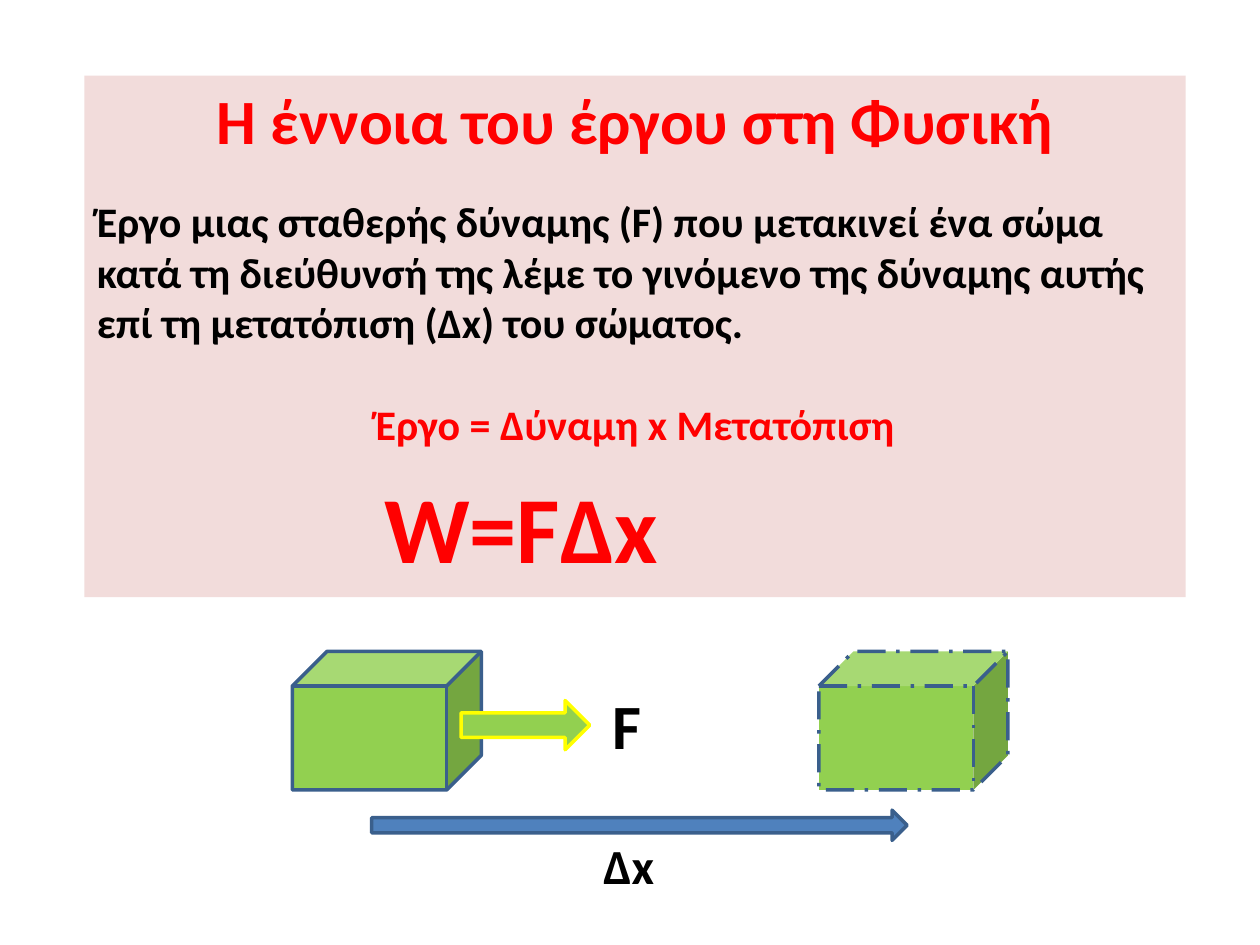
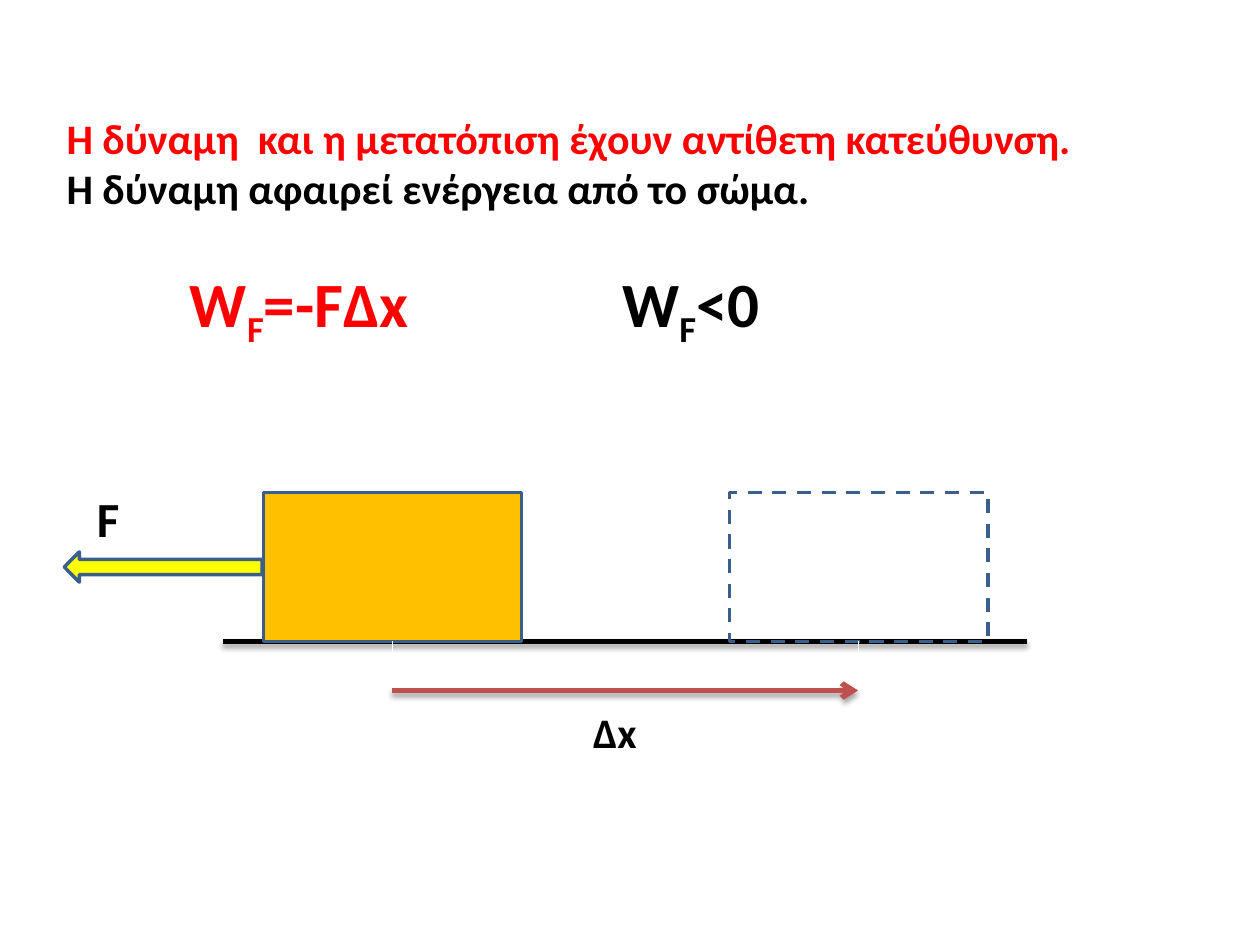
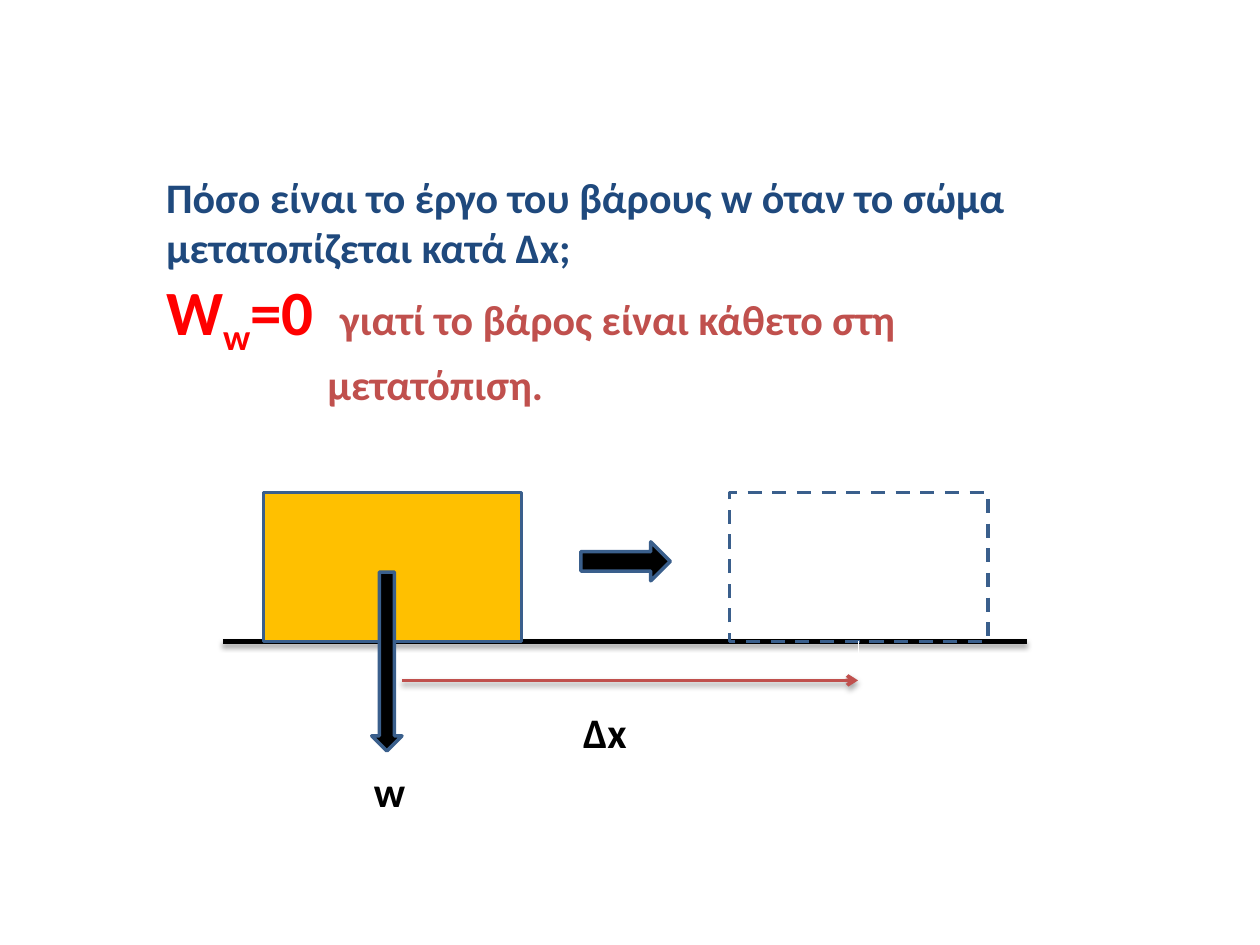
from dataclasses import dataclass

from lxml import etree
from pptx import Presentation
from pptx.dml.color import RGBColor
from pptx.enum.dml import MSO_LINE
from pptx.enum.shapes import MSO_CONNECTOR, MSO_SHAPE
from pptx.enum.text import MSO_ANCHOR, PP_ALIGN
from pptx.oxml.ns import qn
from pptx.util import Inches, Pt

FONT = "Calibri"
BLACK = RGBColor(0x00, 0x00, 0x00)
WHITE = RGBColor(0xFF, 0xFF, 0xFF)
RED = RGBColor(0xFF, 0x00, 0x00)
BRICK = RGBColor(0xC0, 0x50, 0x4D)
NAVY = RGBColor(0x1F, 0x49, 0x7D)
BLUE = RGBColor(0x4F, 0x81, 0xBD)
OUTLINE = RGBColor(0x3A, 0x5F, 0x8C)
GREEN = RGBColor(0x92, 0xD0, 0x50)
YELLOW = RGBColor(0xFF, 0xFF, 0x00)
ORANGE = RGBColor(0xFF, 0xC0, 0x00)
PINK = RGBColor(0xF2, 0xDC, 0xDB)

RECTANGLE, CUBE, ARROW = MSO_SHAPE.RECTANGLE, MSO_SHAPE.CUBE, MSO_SHAPE.RIGHT_ARROW
STRAIGHT = MSO_CONNECTOR.STRAIGHT
DASH, LONG_DASH_DOT = MSO_LINE.DASH, MSO_LINE.LONG_DASH_DOT
CENTER, LEFT = PP_ALIGN.CENTER, PP_ALIGN.LEFT
TOP = MSO_ANCHOR.TOP
BOTTOM_SIDE = 2

# The slide is a grid of 100 columns by 75 rows.
COLUMNS, ROWS = 100, 75
SLIDE_WIDTH, SLIDE_HEIGHT = Inches(10), Inches(7.5)
CELL = SLIDE_WIDTH // COLUMNS


def cells(count):
    return round(count * CELL)


@dataclass
class Box:
    """A region of the slide, in grid cells."""
    left: float
    top: float
    width: float
    height: float

    def inner(self, left, top, width, height):
        return Box(self.left + left, self.top + top, width, height)

    def place(self):
        return [cells(n) for n in (self.left, self.top, self.width, self.height)]


def draw_shape(slide, kind, box, fill=None, line=OUTLINE, dash=None, rotation=0):
    shape = slide.shapes.add_shape(kind, *box.place())
    shape.shadow.inherit = False
    shape.rotation = rotation
    for paint, color in ((shape.fill, fill), (shape.line.fill, line)):
        if color is None:
            paint.background()
        else:
            paint.solid()
            paint.fore_color.rgb = color
    if line is not None:
        shape.line.width = Pt(2)
        shape.line.dash_style = dash
    return shape


def draw_line(slide, box, color, width, shadow=False, arrow=False):
    left, top, across, down = box.place()
    line = slide.shapes.add_connector(STRAIGHT, left, top, left + across, top + down)
    line.line.color.rgb = color
    line.line.width = Pt(width)
    properties = line._element.spPr
    if arrow:
        etree.SubElement(properties.find(qn("a:ln")), qn("a:tailEnd"), type="arrow")
    effects = etree.SubElement(properties, qn("a:effectLst"))
    if shadow:
        outer = etree.SubElement(effects, qn("a:outerShdw"), blurRad=str(int(Pt(3.1))),
                                 dist=str(int(Pt(1.8))), dir="5400000", rotWithShape="0")
        tint = etree.SubElement(outer, qn("a:srgbClr"), val=str(BLACK))
        etree.SubElement(tint, qn("a:alpha"), val="35000")
    return line


def add_run(paragraph, text, size, color, subscript=False):
    run = paragraph.add_run()
    run.text = text
    look = {"name": FONT, "size": Pt(size), "bold": True}
    for name, value in look.items():
        setattr(run.font, name, value)
    run.font.color.rgb = color
    if subscript:
        run.font._element.set("baseline", "-25000")


def write(frame, paragraphs):
    """Fill a frame from (runs, layout) pairs; indent and tabs are in cells."""
    frame.word_wrap = True
    frame.vertical_anchor = TOP
    for number, (runs, layout) in enumerate(paragraphs):
        paragraph = frame.add_paragraph() if number else frame.paragraphs[0]
        properties = paragraph._p.get_or_add_pPr()
        properties.set("marL", str(cells(layout.get("indent", 0))))
        if "tabs" in layout:
            stops = etree.SubElement(properties, qn("a:tabLst"))
            for stop in layout["tabs"]:
                etree.SubElement(stops, qn("a:tab"), pos=str(cells(stop)), algn="l")
        paragraph.alignment = layout.get("align", LEFT)
        if "before" in layout:
            paragraph.space_before = Pt(layout["before"])
        for run in runs:
            add_run(paragraph, *run)


def add_text(slide, box, paragraphs):
    write(slide.shapes.add_textbox(*box.place()).text_frame, paragraphs)


def add_label(slide, box, text, size):
    add_text(slide, box, [([(text, size, BLACK)], {})])


def draw_definition(slide, box):
    panel = draw_shape(slide, RECTANGLE, box, PINK, line=None)
    write(panel.text_frame, [
        ([("Η έννοια του έργου στη Φυσική", 36, RED)], {"align": CENTER}),
        ([("Έργο μιας σταθερής δύναμης (F) που μετακινεί ένα σώμα κατά τη "
           "διεύθυνσή της λέμε το γινόμενο της δύναμης αυτής επί τη "
           "μετατόπιση (Δx) του σώματος.", 24, BLACK)], {"before": 22}),
        ([("Έργο = Δύναμη x Μετατόπιση", 24, RED)], {"align": CENTER, "before": 29.3}),
        ([("W=FΔx", 54, RED)], {"indent": 22.8, "before": 11.4}),
    ])


def draw_pulled_cube(slide, box):
    for column, dash in ((0, None), (41.8, LONG_DASH_DOT)):
        draw_shape(slide, CUBE, box.inner(column, 0, 15, 11), GREEN, dash=dash)
    draw_shape(slide, ARROW, box.inner(13.4, 3.9, 10.2, 3.9), GREEN, YELLOW)
    draw_shape(slide, ARROW, box.inner(6.3, 12.6, 42.5, 2.4), BLUE)
    add_label(slide, box.inner(24.4, 2.3, 11, 7.1), "F", 36)
    add_label(slide, box.inner(23.7, 14.1, 9.4, 5.7), "Δx", 28)


def draw_block_on_floor(slide, box):
    """Floor, block and its dashed final place; returns both rectangles."""
    draw_line(slide, box.inner(12.7, 11.8, 63.8, 0), BLACK, 3, shadow=True)
    start = draw_shape(slide, RECTANGLE, box.inner(15.9, 0, 20.5, 11.8), ORANGE)
    finish = draw_shape(slide, RECTANGLE, box.inner(52.9, 0, 20.5, 11.8), dash=DASH)
    return start, finish


def draw_displacement(slide, box, start, row, width, label_column):
    end = 63.1
    draw_line(slide, box.inner(start, row, end - start, 0), BRICK, width,
              shadow=True, arrow=True)
    add_label(slide, box.inner(label_column, 16.5, 11, 5), "Δx", 24)


def draw_guides(slide, box, blocks):
    for block in blocks:
        guide = draw_line(slide, box.inner(63.1, 11.8, 0, 6.3), WHITE, 0.75)
        guide.begin_connect(block, BOTTOM_SIDE)
        guide.end_x = guide.begin_x


def draw_opposing_force(slide, box):
    blocks = draw_block_on_floor(slide, box)
    draw_shape(slide, ARROW, box.inner(0.1, 4.7, 15.7, 2.4), YELLOW, rotation=180)
    draw_guides(slide, box, blocks)
    add_label(slide, box.inner(1.7, -0.8, 7.1, 5.7), "F", 28)
    draw_displacement(slide, box, 26.1, 15.7, 3, 41.1)


def draw_weight(slide, box):
    _, finish = draw_block_on_floor(slide, box)
    draw_shape(slide, ARROW, box.inner(18.6, 12.2, 14.2, 2.4), BLACK, rotation=90)
    draw_guides(slide, box, [finish])
    draw_shape(slide, ARROW, box.inner(41.1, 3.9, 7.1, 3.1), BLACK)
    draw_displacement(slide, box, 26.9, 14.9, 2, 40.3)
    add_label(slide, box.inner(23.7, 21.2, 4.7, 5), "w", 24)


def write_negative_work(slide, box):
    add_text(slide, box, [
        ([("Η δύναμη  και η μετατόπιση έχουν αντίθετη κατεύθυνση.", 24, RED)],
         {"indent": 1.5}),
        ([("Η δύναμη αφαιρεί ενέργεια από το σώμα.", 24, BLACK)], {"indent": 1.5}),
        ([("\tW", 36, RED), ("F", 36, RED, True), ("=-FΔx\t", 36, RED),
          ("W", 36, BLACK), ("F", 36, BLACK, True), ("<0", 36, BLACK)],
         {"tabs": (11.3, 45.6), "before": 29.3}),
    ])


def write_zero_work(slide, box):
    add_text(slide, box, [
        ([("Πόσο είναι το έργο του βάρους w όταν το σώμα μετατοπίζεται κατά Δx;",
           24, NAVY)], {}),
        ([("W", 36, RED), ("w", 36, RED, True), ("=0\t", 36, RED),
          ("γιατί το βάρος είναι κάθετο στη", 24, BRICK)], {"tabs": (13.8,)}),
        ([("μετατόπιση.", 24, BRICK)], {"indent": 12.8}),
    ])


def main():
    deck = Presentation()
    deck.slide_width, deck.slide_height = SLIDE_WIDTH, SLIDE_HEIGHT
    blank = deck.slide_layouts[6]
    scene = Box(5, 39.1, 77, ROWS - 39.1)
    contents = (
        ((draw_definition, Box(6.7, 6, 87.4, 41.4)),
         (draw_pulled_cube, Box(23.2, 51.7, 56.8, 19.8))),
        ((draw_opposing_force, scene),
         (write_negative_work, Box(2.8, 8.4, 95.3, 19.2))),
        ((draw_weight, scene),
         (write_zero_work, Box(12.2, 13.1, 76.4, 19.9))),
    )
    for regions in contents:
        slide = deck.slides.add_slide(blank)
        for draw, box in regions:
            draw(slide, box)
    deck.save("out.pptx")


if __name__ == "__main__":
    main()
